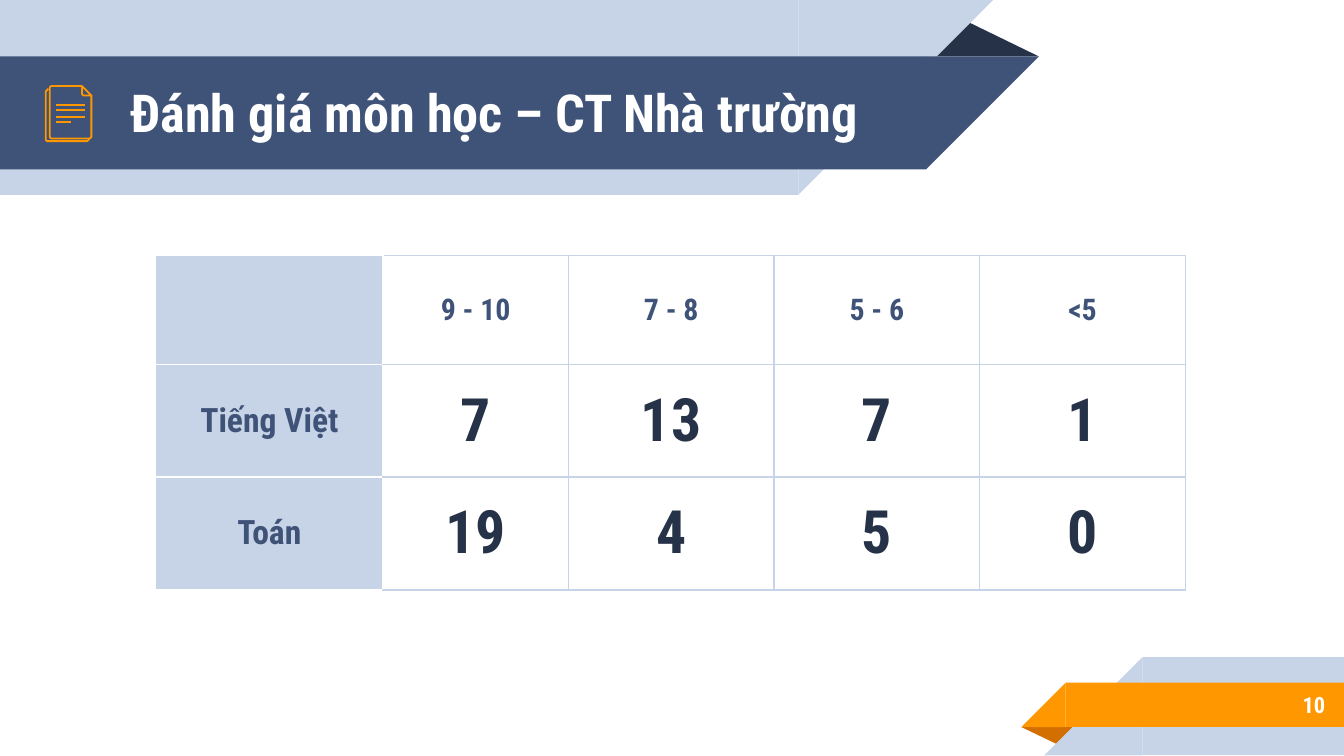
"""Build the subject assessment slide with its ribbons, page icon and score table."""
from lxml.etree import SubElement
from pptx import Presentation
from pptx.dml.color import RGBColor
from pptx.enum.shapes import MSO_CONNECTOR, MSO_SHAPE
from pptx.enum.text import MSO_ANCHOR, MSO_AUTO_SIZE, PP_ALIGN
from pptx.oxml.ns import qn
from pptx.util import Inches, Pt

PALE = RGBColor(0xC7, 0xD3, 0xE6)
NAVY = RGBColor(0x3F, 0x53, 0x78)
DARK = RGBColor(0x26, 0x32, 0x48)
ORANGE = RGBColor(0xFF, 0x98, 0x00)
BROWN = RGBColor(0xD2, 0x6F, 0x00)
WHITE = RGBColor(0xFF, 0xFF, 0xFF)
FONT = "Roboto Condensed"
WIDTH = 10
HEIGHT = WIDTH * 9 / 16

TITLE = "Đánh giá môn học – CT Nhà trường"
PAGE = "10"
ROWS = [
    ["", "9 - 10", "7 - 8", "5 - 6", "<5"],
    ["Tiếng Việt", "7", "13", "7", "1"],
    ["Toán", "19", "4", "5", "0"],
]
COLUMN_WIDTHS = [1.69, 1.38, 1.53, 1.53, 1.53]
ROW_HEIGHTS = [0.81, 0.84, 0.84]

FOLDS = [  # left, top, width, height, rotation, colour
    (6.88, 0.14, 0.85, 0.28, 0, DARK),
    (7.6, 5.41, 0.43, 0.14, 180, BROWN),
]
HEADER_BANDS = [(5.94, 0, 1.45, PALE), (6.89, 0.42, 0.84, NAVY)]
FOOTER_BANDS = [(8.5, 4.89, 0.73, PALE), (7.93, 5.08, 0.33, ORANGE)]

ICON_OUTLINES = [
    ([(66, 103), (66, 104), (65, 105), (64, 105), (36, 105), (35, 105),
      (34, 104), (34, 103), (34, 68), (35, 67), (36, 66)], False),
    ([(68, 71), (68, 101), (68, 102), (67, 103), (66, 103), (38, 103),
      (37, 102), (37, 101), (37, 66), (37, 65), (38, 64), (61, 64)], False),
    ([(61, 70), (61, 64), (68, 71), (63, 71), (62, 71)], True),
]
ICON_LINES = [(0.63, 0.78), (0.63, 0.82), (0.63, 0.87), (0.53, 0.91)]


def add_block(s, kind, box, color, rotation=0):
    sp = s.shapes.add_shape(kind, *map(Inches, box))
    sp.shadow.inherit = False
    sp.fill.solid()
    sp.fill.fore_color.rgb = color
    sp.line.fill.background()
    sp.rotation = rotation
    return sp


def add_ribbons(s):
    for left, top, width, height, rotation, color in FOLDS:
        box = (left, top, width, height)
        add_block(s, MSO_SHAPE.ISOSCELES_TRIANGLE, box, color, rotation).adjustments[0] = 0.324
    for edge, top, size, color in HEADER_BANDS:
        add_block(s, MSO_SHAPE.RECTANGLE, (0, top, edge, size), color)
        add_block(s, MSO_SHAPE.RIGHT_TRIANGLE, (edge, top, size, size), color, 90)
    for edge, top, size, color in FOOTER_BANDS:
        add_block(s, MSO_SHAPE.RECTANGLE, (edge, top, WIDTH - edge, size), color)
        add_block(s, MSO_SHAPE.RIGHT_TRIANGLE, (edge - size, top, size, size), color, 270)


def stroke(shape):
    shape.line.color.rgb = ORANGE
    shape.line.width = Pt(0.96)


def add_icon(s):
    for points, closed in ICON_OUTLINES:
        builder = s.shapes.build_freeform(*points[0], scale=Inches(0.01))
        builder.add_line_segments(points[1:], close=closed)
        sp = builder.convert_to_shape()
        sp.shadow.inherit = False
        sp.fill.background()
        stroke(sp)
    for right, y in ICON_LINES:
        ends = map(Inches, (0.42, y, right, y))
        line = s.shapes.add_connector(MSO_CONNECTOR.STRAIGHT, *ends)
        stroke(line)
        SubElement(line.element.spPr, qn("a:effectLst"))


def write(tf, text, size, color, align):
    p = tf.paragraphs[0]
    p.alignment = align
    r = p.add_run()
    r.text = text
    for name, value in {"name": FONT, "size": Pt(size), "bold": True}.items():
        setattr(r.font, name, value)
    r.font.color.rgb = color


def fill_box(sp, box, text, size, align):
    for name, value in zip(("left", "top", "width", "height"), box):
        setattr(sp, name, Inches(value))
    tf = sp.text_frame
    settings = {"word_wrap": True, "auto_size": MSO_AUTO_SIZE.NONE,
                "vertical_anchor": MSO_ANCHOR.MIDDLE}
    settings |= {f"margin_{side}": Inches(0.1) for side in ("left", "top", "right", "bottom")}
    for name, value in settings.items():
        setattr(tf, name, value)
    write(tf, text, size, WHITE, align)


def set_borders(cell, colors):
    props = cell._tc.get_or_add_tcPr()
    for index, (side, color) in enumerate(zip("LRTB", colors)):
        line = props.makeelement(qn(f"a:ln{side}"), {"w": str(Pt(0.75))})
        SubElement(SubElement(line, qn("a:solidFill")), qn("a:srgbClr"), val=str(color))
        props.insert(index, line)


def text_format(row, column):
    if row == 0:
        return 16, NAVY
    return (18, NAVY) if column == 0 else (32, DARK)


def add_scores(s):
    box = (1.16, 1.9, sum(COLUMN_WIDTHS), sum(ROW_HEIGHTS))
    frame = s.shapes.add_table(len(ROWS), len(COLUMN_WIDTHS), *map(Inches, box))
    table = frame.table
    table.first_row = table.horz_banding = False
    for column, width in zip(table.columns, COLUMN_WIDTHS):
        column.width = Inches(width)
    for i, (texts, height) in enumerate(zip(ROWS, ROW_HEIGHTS)):
        table.rows[i].height = Inches(height)
        for j, text in enumerate(texts):
            cell = table.cell(i, j)
            cell.vertical_anchor = MSO_ANCHOR.MIDDLE
            cell.margin_top = cell.margin_bottom = Inches(0.07)
            if j == 0:
                cell.fill.solid()
                cell.fill.fore_color.rgb = PALE
            else:
                cell.fill.background()
            rest = WHITE if j == 0 else PALE
            set_borders(cell, (WHITE if j < 2 else PALE, rest, rest, rest))
            if text:
                write(cell.text_frame, text, *text_format(i, j), PP_ALIGN.CENTER)


def main():
    prs = Presentation()
    prs.slide_width, prs.slide_height = Inches(WIDTH), Inches(HEIGHT)
    s = prs.slides.add_slide(prs.slide_layouts[5])
    add_ribbons(s)
    number = s.shapes.add_textbox(0, 0, 0, 0)
    fill_box(number, (8.33, 5.07, 1.63, 0.35), PAGE, 12, PP_ALIGN.RIGHT)
    add_icon(s)
    title = s.shapes.title
    title.element.getparent().append(title.element)
    fill_box(title, (0.87, 0.41, 5.75, 0.84), TITLE, 28, PP_ALIGN.LEFT)
    add_scores(s)
    prs.save("out.pptx")


if __name__ == "__main__":
    main()
